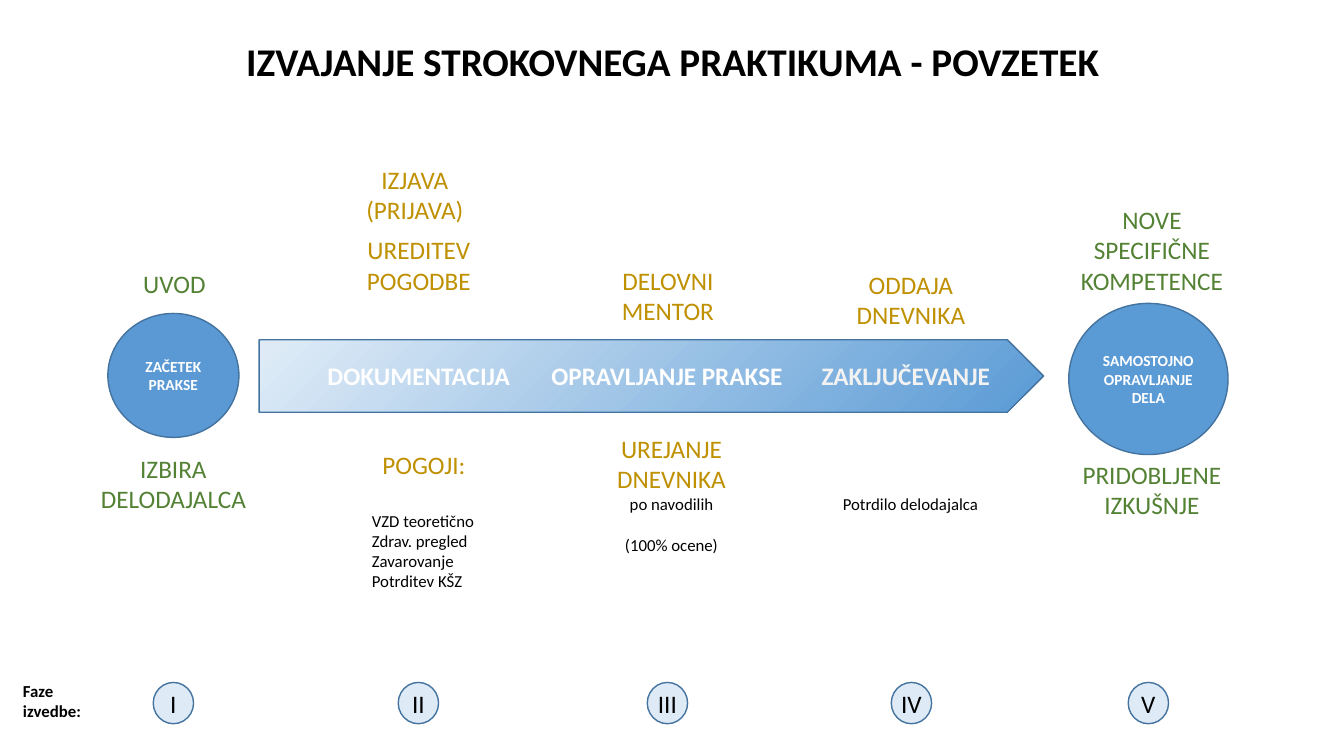
"""Builds the one-slide summary of the professional practicum phases."""
from pptx import Presentation
from pptx.dml.color import RGBColor
from pptx.enum.shapes import MSO_SHAPE as SHAPE
from pptx.enum.text import MSO_ANCHOR as ANCHOR, MSO_AUTO_SIZE as AUTO, PP_ALIGN as ALIGN
from pptx.oxml import parse_xml
from pptx.util import Emu, Pt

PX = 9144
THEME = {
    "font": "Calibri",
    "black": "000000", "white": "FFFFFF", "soft": "F2F2F2",
    "green": "548235", "gold": "BF9000",
    "start": "5A99D4", "blue": "5B9BD5", "pale": "DEEBF7", "edge": "43739E",
    "title": 28, "label": 18, "note": 12, "circle": 11,
}


def write(tf, lines, align=ALIGN.CENTER):
    """Each line is text, size, colour, bold, space before, then its own alignment if any."""
    tf.word_wrap = True
    for i, (text, size, color, bold, gap, *own) in enumerate(lines):
        p = tf.add_paragraph() if i else tf.paragraphs[0]
        p.alignment = own[0] if own else align
        p.space_before = Pt(gap)
        r = p.add_run()
        r.text = text
        r.font.name = THEME["font"]
        r.font.size = Pt(THEME[size])
        r.font.bold = bold
        r.font.color.rgb = RGBColor.from_string(THEME[color])


def add_shape(kind, box, fill):
    sp = s.shapes.add_shape(kind, *[Emu(v * PX) for v in box])
    sp.shadow.inherit = False
    sp.fill.solid()
    sp.fill.fore_color.rgb = RGBColor.from_string(THEME[fill])
    sp.line.color.rgb = RGBColor.from_string(THEME["edge"])
    sp.line.width = Pt(1)
    sp.text_frame.vertical_anchor = ANCHOR.MIDDLE
    return sp


prs = Presentation()
prs.slide_width, prs.slide_height = Emu(1333 * PX), Emu(750 * PX)
s = prs.slides.add_slide(prs.slide_layouts[5])

title = s.shapes.title
title.left, title.top, title.width, title.height = [Emu(v * PX) for v in (34, 32, 1266, 57)]
title.text_frame.auto_size = AUTO.NONE
title.text_frame.vertical_anchor = ANCHOR.TOP
write(title.text_frame, [("IZVAJANJE STROKOVNEGA PRAKTIKUMA - POVZETEK", "title", "black", True, 0)])

arrow = add_shape(SHAPE.PENTAGON, (257, 337, 778, 72), "blue")
stops = "".join(
    f'<a:gs pos="{pos}000"><a:srgbClr val="{THEME[color]}"/></a:gs>'
    for pos, color in ((2, "pale"), (99, "blue"), (100, "pale"))
)
gradient = parse_xml(
    '<a:gradFill xmlns:a="http://schemas.openxmlformats.org/drawingml/2006/main" rotWithShape="1">'
    f'<a:gsLst>{stops}</a:gsLst>'
    '<a:path path="circle"><a:fillToRect r="100000" b="100000"/></a:path></a:gradFill>'
)
spPr = arrow.element.spPr
spPr.replace(spPr.find("{*}solidFill"), gradient)

for text, box, fill in (
    ("ZAČETEK PRAKSE", (107, 311, 130, 123), "start"),
    ("SAMOSTOJNO OPRAVLJANJE DELA", (1060, 301, 158, 150), "blue"),
):
    circle = add_shape(SHAPE.FLOWCHART_CONNECTOR, box, fill)
    write(circle.text_frame, [(text, "circle", "white", True, 0)])

stages = [
    ("DOKUMENTACIJA", (315, 353, 210, 40), "label", "white"),
    ("OPRAVLJANJE PRAKSE", (537, 353, 250, 40), "label", "white"),
    ("ZAKLJUČEVANJE", (805, 353, 197, 40), "label", "soft"),
    ("Faze izvedbe:", (13, 670, 110, 50), "note", "black"),
]
labels = [
    ("UVOD", (108, 261, 130, 40), "label", "green"),
    ("IZBIRA DELODAJALCA", (89, 445, 166, 71), "label", "green"),
    ("UREDITEV POGODBE", (354, 228, 123, 71), "label", "gold"),
    ("DELOVNI MENTOR", (601, 258, 123, 71), "label", "gold"),
    ("ODDAJA DNEVNIKA", (827, 262, 153, 71), "label", "gold"),
    ("Potrdilo delodajalca", (819, 485, 168, 30), "note", "black"),
    ("NOVE SPECIFIČNE KOMPETENCE", (1062, 198, 161, 101), "label", "green"),
    ("PRIDOBLJENE IZKUŠNJE", (1062, 451, 161, 71), "label", "green"),
]
conditions = [("POGOJI:", "label", "gold", False, 0)] + [
    (text, "note", "black", False, gap, ALIGN.LEFT)
    for text, gap in (("VZD teoretično", 22), ("Zdrav. pregled", 0),
                      ("Zavarovanje", 0), ("Potrditev KŠZ", 0))
]
diary = [
    ("UREJANJE DNEVNIKA", "label", "gold", False, 0),
    ("po navodilih", "note", "black", False, 0),
    ("(100% ocene)", "note", "black", False, 15),
]
application = [(text, "label", "gold", False, 0) for text in ("IZJAVA", "(PRIJAVA)")]

boxes = [(box, [(text, size, color, True, 0)], ALIGN.LEFT) for text, box, size, color in stages]
boxes += [(box, [(text, size, color, False, 0)], ALIGN.CENTER) for text, box, size, color in labels]
boxes += [
    ((350, 158, 123, 71), application, ALIGN.CENTER),
    ((359, 441, 123, 151), conditions, ALIGN.CENTER),
    ((585, 425, 162, 131), diary, ALIGN.CENTER),
]
for box, lines, align in boxes:
    tf = s.shapes.add_textbox(*[Emu(v * PX) for v in box]).text_frame
    tf.auto_size = AUTO.SHAPE_TO_FIT_TEXT
    write(tf, lines, align)

for numeral, left in (("I", 152), ("II", 395), ("III", 642), ("IV", 884), ("V", 1119)):
    phase = add_shape(SHAPE.OVAL, (left, 677, 40, 41), "pale")
    tf = phase.text_frame
    tf.margin_left = tf.margin_right = tf.margin_top = tf.margin_bottom = 0
    write(tf, [(numeral, "label", "black", False, 0)])

prs.save("out.pptx")
